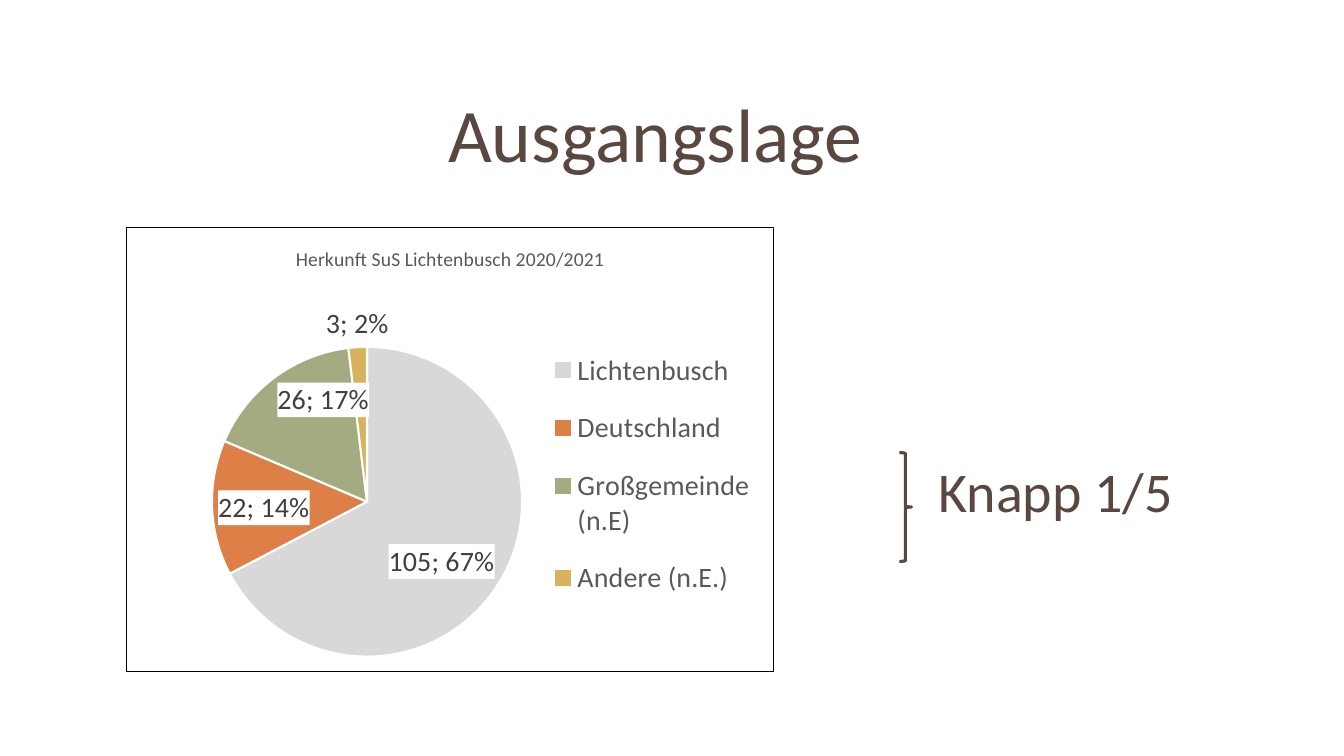
from dataclasses import dataclass

from pptx import Presentation
from pptx.chart.chart import Chart
from pptx.chart.data import CategoryChartData
from pptx.dml.color import RGBColor
from pptx.enum.chart import XL_CHART_TYPE, XL_LABEL_POSITION, XL_LEGEND_POSITION
from pptx.enum.shapes import MSO_SHAPE
from pptx.enum.text import MSO_ANCHOR, MSO_AUTO_SIZE, PP_ALIGN
from pptx.oxml import parse_xml
from pptx.oxml.ns import nsdecls
from pptx.util import Pt

PX = 9144  # 100 px to the inch
FONT = "Calibri"
BROWN = "594740"
GREY = "595959"
DARK = "404040"


@dataclass(frozen=True)
class Box:
    left: int
    top: int
    width: int
    height: int

    def emu(self) -> tuple[int, ...]:
        return tuple(n * PX for n in (self.left, self.top, self.width, self.height))


@dataclass(frozen=True)
class Slice:
    name: str
    count: int
    color: str


CHART = Box(125, 225, 643, 442)
PIE = Box(85, 119, 308, 308)
LEGEND = Box(415, 102, 215, 287)
SLICES = [
    Slice("Lichtenbusch", 105, "D8D8D8"),
    Slice("Deutschland", 22, "DD8047"),
    Slice("Großgemeinde (n.E)", 26, "A5AB81"),
    Slice("Andere (n.E.)", 3, "D8B25C"),
]


def rgb(code: str) -> RGBColor:
    return RGBColor.from_string(code)


def style(font, size: int, color: str) -> None:
    font.name = FONT
    font.size = Pt(size)
    font.bold = False
    font.color.rgb = rgb(color)


def frame(fill: str, line: str = ""):
    """Chart shape properties with a solid fill and an optional thin border."""
    def solid(code: str) -> str:
        return f'<a:solidFill><a:srgbClr val="{code}"/></a:solidFill>'

    edge = f'<a:ln w="9525">{solid(line)}</a:ln>' if line else ""
    return parse_xml(f'<c:spPr {nsdecls("c", "a")}>{solid(fill)}{edge}</c:spPr>')


def layout(box: Box, inner: bool = False):
    """Manual layout of a box given in px from the chart's corner."""
    parts = {
        "x": box.left / CHART.width,
        "y": box.top / CHART.height,
        "w": box.width / CHART.width,
        "h": box.height / CHART.height,
    }
    target = '<c:layoutTarget val="inner"/>' if inner else ""
    modes = '<c:xMode val="edge"/><c:yMode val="edge"/>'
    sizes = "".join(f'<c:{key} val="{val:.3f}"/>' for key, val in parts.items())
    return parse_xml(
        f'<c:layout {nsdecls("c")}><c:manualLayout>{target}{modes}{sizes}'
        "</c:manualLayout></c:layout>"
    )


def split(labels) -> None:
    """Put a semicolon between value and percentage."""
    mark = parse_xml(f'<c:separator {nsdecls("c")}>; </c:separator>')
    labels.xpath("c:showBubbleSize")[0].addnext(mark)


def label(series) -> None:
    labels = series.data_labels
    style(labels.font, 20, DARK)
    labels.show_value = True
    labels.show_percentage = True
    labels.position = XL_LABEL_POSITION.INSIDE_END
    root = series._element.xpath("c:dLbls")[0]
    root.xpath("c:txPr")[0].addprevious(frame("FFFFFF"))
    split(root)

    last = series.points[len(SLICES) - 1].data_label
    style(last.font, 20, DARK)
    last.position = XL_LABEL_POSITION.OUTSIDE_END
    item = root.xpath("c:dLbl")[0]
    item.xpath("c:showPercent")[0].set("val", "1")
    split(item)


def place(chart: Chart) -> None:
    space = chart._chartSpace
    for old in space.xpath("c:chart/c:plotArea/c:layout | c:chart/c:legend/c:layout"):
        old.getparent().remove(old)
    space.xpath("c:chart/c:plotArea")[0].insert(0, layout(PIE, inner=True))
    space.xpath("c:chart/c:legend/c:overlay")[0].addprevious(layout(LEGEND))
    space.xpath("c:txPr")[0].addprevious(frame("FFFFFF", "000000"))


def draw_pie(slide) -> None:
    data = CategoryChartData()
    data.categories = [part.name for part in SLICES]
    data.add_series("Series 1", [part.count for part in SLICES])
    chart = slide.shapes.add_chart(XL_CHART_TYPE.PIE, *CHART.emu(), data).chart
    style(chart.font, 10, "000000")

    chart.has_title = True
    title = chart.chart_title.text_frame
    title.text = "Herkunft SuS Lichtenbusch 2020/2021"
    style(title.paragraphs[0].font, 14, GREY)
    chart.chart_title.include_in_layout = False

    chart.has_legend = True
    chart.legend.position = XL_LEGEND_POSITION.RIGHT
    chart.legend.include_in_layout = False
    style(chart.legend.font, 20, GREY)

    chart.plots[0].vary_by_categories = True
    series = chart.plots[0].series[0]
    for spot, part in enumerate(SLICES):
        look = series.points[spot].format
        look.fill.solid()
        look.fill.fore_color.rgb = rgb(part.color)
        look.line.color.rgb = rgb("FFFFFF")
        look.line.width = Pt(1.5)
    label(series)
    place(chart)


def draw_title(slide) -> None:
    title = slide.shapes.title
    title.left, title.top, title.width, title.height = Box(110, 63, 1080, 148).emu()
    text = title.text_frame
    text.text = "Ausgangslage"
    text.vertical_anchor = MSO_ANCHOR.MIDDLE
    para = text.paragraphs[0]
    para.alignment = PP_ALIGN.CENTER
    para.line_spacing = 0.9
    style(para.font, 54, BROWN)


def draw_note(slide) -> None:
    text = slide.shapes.add_textbox(*Box(921, 448, 278, 77).emu()).text_frame
    text.word_wrap = True
    text.auto_size = MSO_AUTO_SIZE.SHAPE_TO_FIT_TEXT
    text.text = "Knapp 1/5"
    style(text.paragraphs[0].font, 40, BROWN)

    brace = slide.shapes.add_shape(MSO_SHAPE.RIGHT_BRACE, *Box(892, 449, 12, 108).emu())
    brace.shadow.inherit = False
    brace.fill.background()
    brace.line.color.rgb = rgb(BROWN)
    brace.line.width = Pt(2.25)


def main() -> None:
    deck = Presentation()
    deck.slide_width, deck.slide_height = 1333 * PX, 750 * PX
    slide = deck.slides.add_slide(deck.slide_layouts[5])
    draw_title(slide)
    draw_note(slide)
    draw_pie(slide)
    deck.save("out.pptx")


if __name__ == "__main__":
    main()
